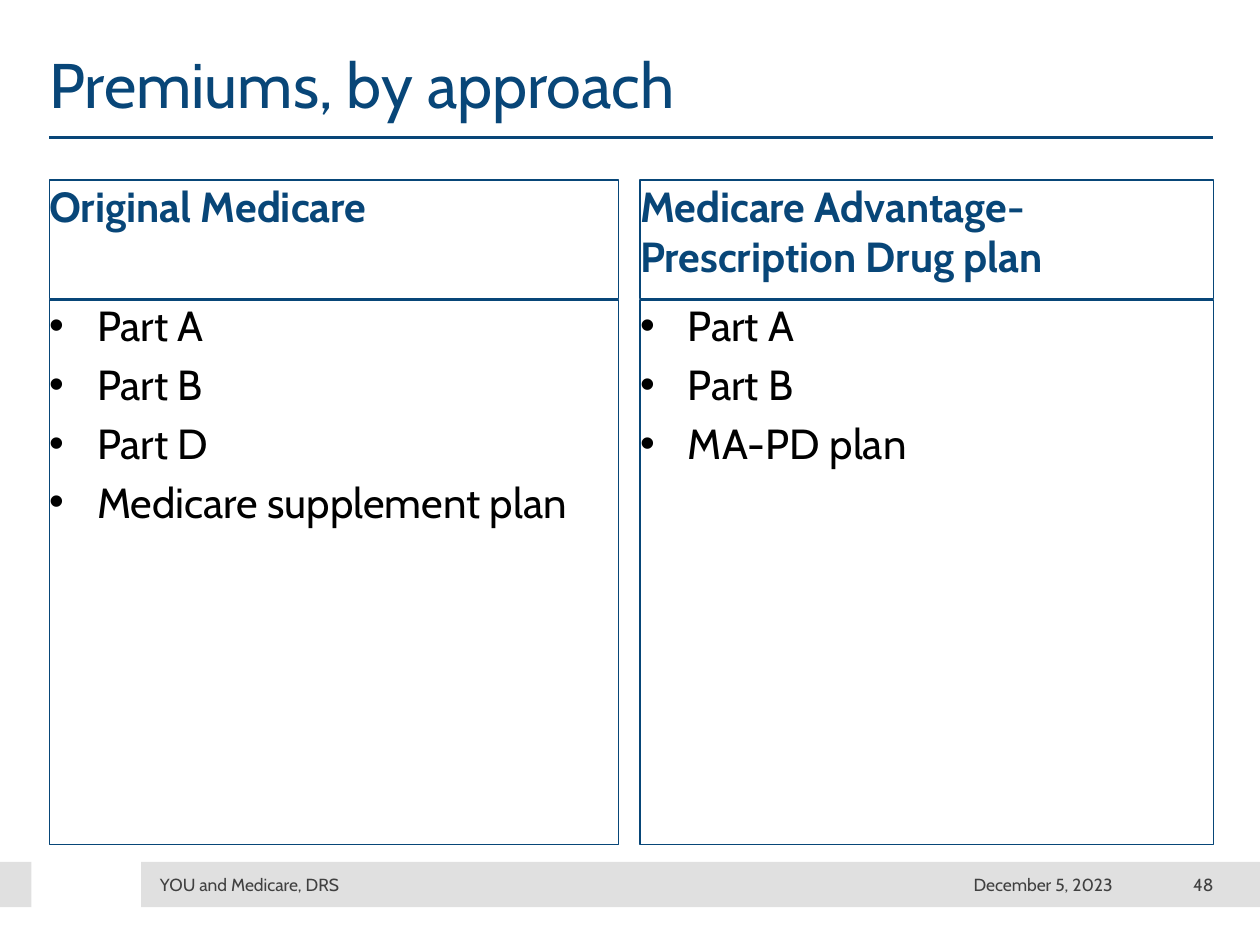
from lxml import etree
from pptx import Presentation
from pptx import util as u
from pptx.dml.color import RGBColor
from pptx.enum import shapes, text
from pptx.oxml.ns import qn

NAVY, BLACK, GREY, BAND = "084678", "000000", "404040", "E0E0E0"


def color(value):
    return RGBColor.from_string(value)


def write(box, lines, size, ink, bold=False, bullets=False,
          align=text.PP_ALIGN.LEFT, anchor=text.MSO_ANCHOR.TOP):
    frame = box.text_frame
    frame.word_wrap = True
    frame.vertical_anchor = anchor
    frame.margin_left = frame.margin_right = frame.margin_top = frame.margin_bottom = 0
    frame.text = "\n".join(lines)
    for index, para in enumerate(frame.paragraphs):
        para.alignment = align
        if index:
            para.space_before = u.Pt(size * 0.2)
        if bullets:
            props = para._p.get_or_add_pPr()
            props.set("marL", str(u.Inches(0.38)))
            props.set("indent", str(u.Inches(-0.38)))
            etree.SubElement(props, qn("a:buFont")).set("typeface", "Arial")
            etree.SubElement(props, qn("a:buChar")).set("char", "•")
        para.font.name = "Cabin"
        para.font.size = u.Pt(size)
        para.font.bold = bold
        para.font.color.rgb = color(ink)


deck = Presentation()
deck.slide_width, deck.slide_height = u.Inches(10), u.Inches(7.5)
page = deck.slides.add_slide(deck.slide_layouts[6])

for left, width in [(1.12, 8.88), (0, 0.25)]:
    band = page.shapes.add_shape(shapes.MSO_SHAPE.RECTANGLE, u.Inches(left),
                                 u.Inches(6.84), u.Inches(width), u.Inches(0.36))
    band.shadow.inherit = False
    band.fill.solid()
    band.fill.fore_color.rgb = color(BAND)
    band.line.fill.background()

rule = page.shapes.add_connector(shapes.MSO_CONNECTOR.STRAIGHT, u.Inches(0.39),
                                 u.Inches(1.09), u.Inches(9.63), u.Inches(1.09))
rule.line.color.rgb = color(NAVY)
rule.line.width = u.Pt(2)
etree.SubElement(rule._element.spPr, qn("a:effectLst"))

title = page.shapes.add_textbox(u.Inches(0.39), u.Inches(0.36), u.Inches(9.24), u.Inches(0.73))
write(title, ["Premiums, by approach"], 36, NAVY)

approaches = [
    (0.39, 4.52, "Original Medicare",
     ["Part A", "Part B", "Part D", "Medicare supplement plan"]),
    (5.08, 4.55, "Medicare Advantage-Prescription Drug plan",
     ["Part A", "Part B", "MA-PD plan"]),
]
for left, width, heading, premiums in approaches:
    for top, height, lines, ink, is_heading in [(1.43, 0.94, [heading], NAVY, True),
                                                (2.38, 4.32, premiums, BLACK, False)]:
        box = page.shapes.add_shape(shapes.MSO_SHAPE.RECTANGLE, u.Inches(left),
                                    u.Inches(top), u.Inches(width), u.Inches(height))
        box.shadow.inherit = False
        box.fill.background()
        box.line.color.rgb = color(NAVY)
        box.line.width = u.Pt(0.75)
        write(box, lines, 24, ink, bold=is_heading, bullets=not is_heading)

for left, width, label, align in [
    (8.93, 0.7, "48", text.PP_ALIGN.RIGHT),
    (1.27, 3.96, "YOU and Medicare, DRS", text.PP_ALIGN.LEFT),
    (6.5, 2.33, "December 5, 2023", text.PP_ALIGN.RIGHT),
]:
    footer = page.shapes.add_textbox(u.Inches(left), u.Inches(6.91), u.Inches(width), u.Inches(0.22))
    write(footer, [label], 10, GREY, align=align, anchor=text.MSO_ANCHOR.MIDDLE)

deck.save("out.pptx")
